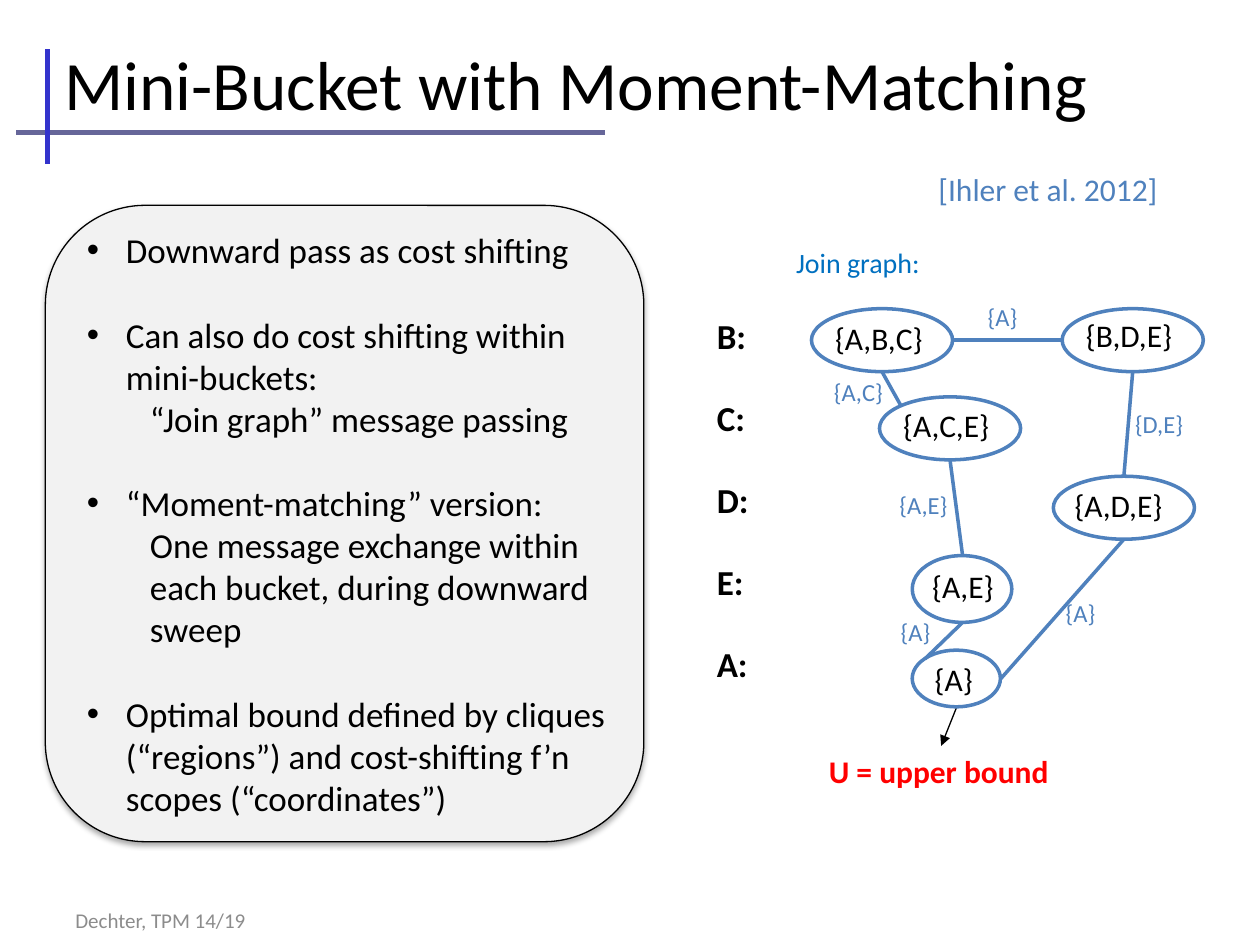
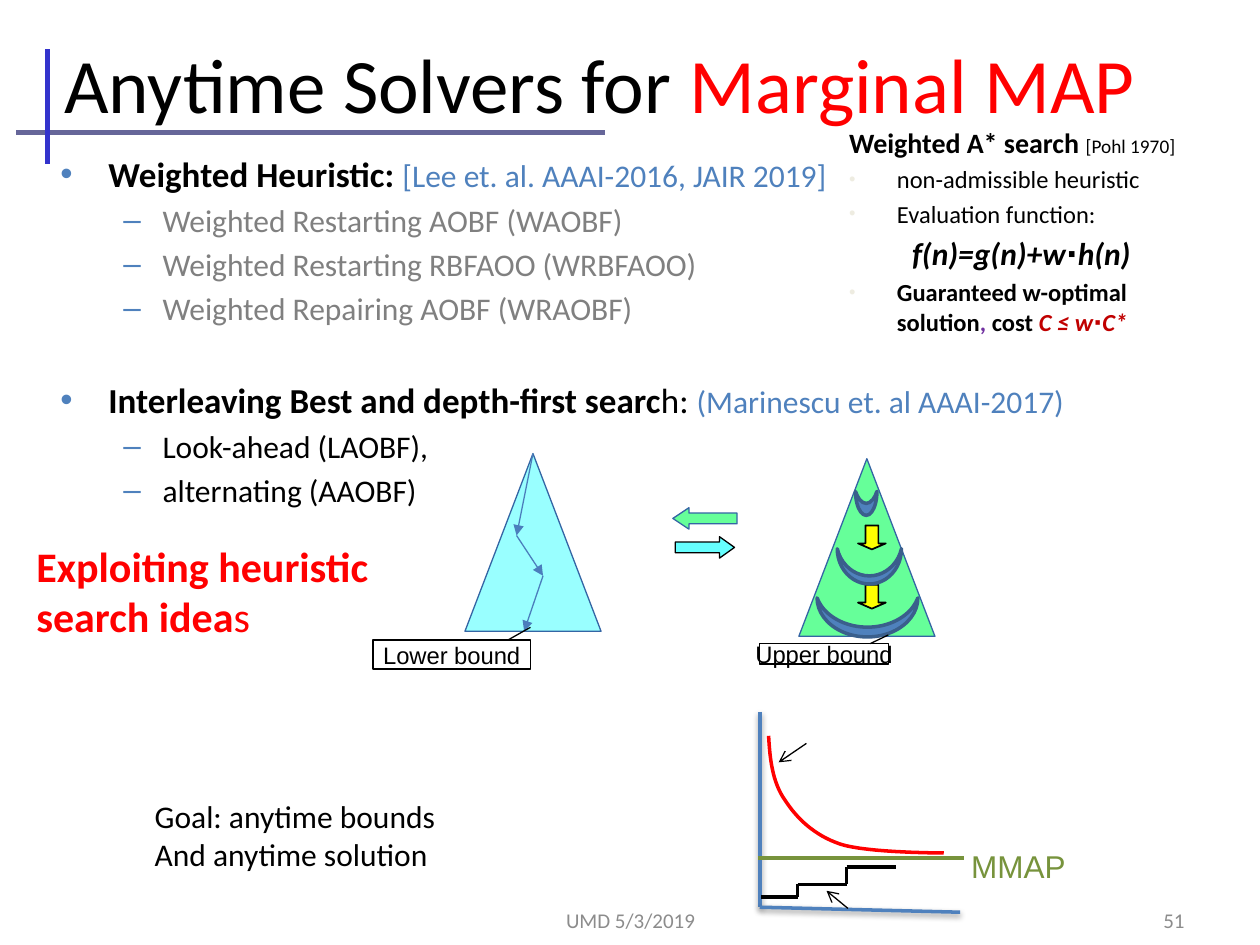
"""Build two slides on mini-bucket bounds and anytime solvers."""
from dataclasses import dataclass

from lxml import etree
from pptx import Presentation
from pptx import util as u
from pptx.dml import color
from pptx.enum import shapes, text
from pptx.oxml import ns

BLACK, RED, BLUE, GREY = "000000", "FF0000", "4F81BD", "8C8C8C"
GREEN, OLIVE, CYAN, YELLOW = "66FF99", "77933C", "99FFFF", "FFFF00"
SHAPE = shapes.MSO_SHAPE
LEFT, CENTER, RIGHT = text.PP_ALIGN.LEFT, text.PP_ALIGN.CENTER, text.PP_ALIGN.RIGHT


@dataclass
class Span:
    words: str
    size: float = 18
    ink: str = BLACK
    bold: bool = False
    italic: bool = False
    font: str = "Calibri"


@dataclass
class Para:
    spans: list[Span]
    left: float = 0
    hang: float = 0
    bullet: str = ""
    bullet_ink: str = BLACK
    bullet_scale: int = 100
    before: float = 0
    align: text.PP_ALIGN = LEFT
    level: int = 0


@dataclass
class Box:
    at: tuple[float, float, float, float]
    paras: list[Para]
    wrap: bool = False
    middle: bool = False


@dataclass
class Line:
    start: tuple[float, float]
    end: tuple[float, float]
    ink: str = BLUE
    width: float = 2
    arrow: str = ""
    shadow: int = 0


@dataclass
class Figure:
    kind: shapes.MSO_SHAPE
    at: tuple[float, float, float, float]
    fill: str = ""
    ink: str = BLUE
    width: float = 2
    adjust: tuple[float, ...] = ()
    turn: int = 0
    shadow: int = 0


def rgb(code: str) -> color.RGBColor:
    return color.RGBColor.from_string(code)


def inches(values) -> list[u.Length]:
    return [u.Inches(value) for value in values]


def set_effect(item, alpha: int = 0) -> None:
    """Replace the theme shadow with none, or with a soft one below."""
    effects = etree.SubElement(item._element.spPr, ns.qn("a:effectLst"))
    if alpha:
        cast = etree.SubElement(effects, ns.qn("a:outerShdw"), blurRad="40000",
                                dist="22000", dir="5400000", rotWithShape="0")
        tint = etree.SubElement(cast, ns.qn("a:srgbClr"), val=BLACK)
        etree.SubElement(tint, ns.qn("a:alpha"), val=str(alpha * 1000))


def set_line(item, ink: str, width: float) -> None:
    item.line.color.rgb = rgb(ink)
    item.line.width = u.Pt(width)


def format_para(para, plan: Para) -> None:
    para.alignment = plan.align
    para.level = plan.level
    if plan.before:
        para.space_before = u.Pt(plan.before)
    props = para._p.get_or_add_pPr()
    if plan.left:
        props.set("marL", str(u.Inches(plan.left)))
        props.set("indent", str(u.Inches(plan.hang)))
    if plan.bullet:
        tint = etree.SubElement(props, ns.qn("a:buClr"))
        etree.SubElement(tint, ns.qn("a:srgbClr"), val=plan.bullet_ink)
        etree.SubElement(props, ns.qn("a:buSzPct"), val=str(plan.bullet_scale * 1000))
        etree.SubElement(props, ns.qn("a:buFont"), typeface="Arial")
        etree.SubElement(props, ns.qn("a:buChar"), char=plan.bullet)
    for part in plan.spans:
        span = para.add_run()
        span.text = part.words
        span.font.name, span.font.size = part.font, u.Pt(part.size)
        span.font.bold, span.font.italic = part.bold, part.italic
        span.font.color.rgb = rgb(part.ink)


def write(item, paras: list[Para], wrap: bool = True, middle: bool = False) -> None:
    frame = item.text_frame
    frame.word_wrap = wrap
    frame.auto_size = text.MSO_AUTO_SIZE.NONE
    frame.vertical_anchor = text.MSO_ANCHOR.MIDDLE if middle else text.MSO_ANCHOR.TOP
    for index, plan in enumerate(paras):
        para = frame.add_paragraph() if index else frame.paragraphs[0]
        format_para(para, plan)


def draw_box(page, box: Box) -> None:
    write(page.shapes.add_textbox(*inches(box.at)), box.paras, box.wrap, box.middle)


def draw_label(page, at: tuple[float, float, float, float], span: Span) -> None:
    draw_box(page, Box(at, [Para([span])]))


def draw_line(page, line: Line) -> None:
    item = page.shapes.add_connector(shapes.MSO_CONNECTOR.STRAIGHT,
                                     *inches(line.start + line.end))
    set_line(item, line.ink, line.width)
    if line.arrow:
        etree.SubElement(item.line._get_or_add_ln(), ns.qn("a:tailEnd"), type=line.arrow)
    set_effect(item, line.shadow)


def draw_path(page, points, **style) -> None:
    for start, end in zip(points, points[1:]):
        draw_line(page, Line(start, end, **style))


def draw_figure(page, figure: Figure):
    item = page.shapes.add_shape(figure.kind, *inches(figure.at))
    for index, value in enumerate(figure.adjust):
        item.adjustments[index] = value
    if figure.fill:
        item.fill.solid()
        item.fill.fore_color.rgb = rgb(figure.fill)
    else:
        item.fill.background()
    set_line(item, figure.ink, figure.width)
    set_effect(item, figure.shadow)
    item.rotation = figure.turn
    return item


def draw_callout(page, at: tuple[float, float, float, float], words: str) -> None:
    item = draw_figure(page, Figure(SHAPE.LINE_CALLOUT_1, at, "FFFFFF", BLACK, 0.75,
                                    (-0.44, 1, -0.01, 0.86)))
    frame = item.text_frame
    frame.margin_left = frame.margin_right = u.Inches(0.09)
    frame.margin_top = frame.margin_bottom = u.Inches(0.04)
    write(item, [Para([Span(words, 13.6, font="Arial")], align=CENTER)], False, True)


def bezier(start, first, second, end, steps: int = 16) -> list[tuple[float, float]]:
    """Return points along one cubic curve, without its start."""
    points = []
    for step in range(1, steps + 1):
        t = step / steps
        weights = ((1 - t) ** 3, 3 * t * (1 - t) ** 2, 3 * t * t * (1 - t), t ** 3)
        points.append(tuple(sum(w * p[axis] for w, p in zip(weights, (start, first, second, end)))
                            for axis in (0, 1)))
    return points


def draw_curve(page, knots: list[tuple[float, float]], ink: str) -> None:
    points = [knots[0]]
    for index in range(0, len(knots) - 1, 3):
        points += bezier(*knots[index:index + 4])
    builder = page.shapes.build_freeform(*inches(points[0]), scale=1.0)
    builder.add_line_segments([inches(point) for point in points[1:]], close=False)
    item = builder.convert_to_shape()
    item.fill.background()
    set_line(item, ink, 2)
    set_effect(item)


def draw_footer(page, left: float, width: float, words: str, align) -> None:
    para = Para([Span(words, 12, GREY)], align=align)
    draw_box(page, Box((left, 7.1, width, 0.4), [para], True, True))


def place(holder, at: tuple[float, float, float, float]) -> None:
    holder.left, holder.top, holder.width, holder.height = inches(at)


def start_page(deck, layout: int, title: list[Span]):
    page = deck.slides.add_slide(deck.slide_layouts[layout])
    draw_line(page, Line((0.13, 1.05), (4.8, 1.05), "666699", 3))
    draw_line(page, Line((0.38, 1.3), (0.38, 0.39), "3333CC", 3))
    place(page.shapes.title, (0.41, 0.1, 8.92, 1.12))
    write(page.shapes.title, [Para(title)], middle=True)
    return page


def build_matching(deck) -> None:
    page = start_page(deck, 5, [Span("Mini-Bucket with Moment-Matching", 39.6)])
    for row, letter in enumerate("BCDEA"):
        draw_label(page, (5.59, 2.45 + 0.65 * row, 0.45, 0.44), Span(f"{letter}:", 20, bold=True))
    draw_label(page, (6.48, 5.92, 1.96, 0.4), Span("U = upper bound", ink=RED, bold=True))
    draw_label(page, (6.22, 1.9, 1.19, 0.37), Span("Join graph:", 16, "0070C0"))
    draw_label(page, (7.35, 1.3, 1.96, 0.4), Span("[Ihler et al. 2012]", ink=BLUE))
    draw_line(page, Line((7.59, 5.62), (7.47, 5.92), BLACK, 0.75, "triangle"))

    cliques = [("{A,B,C}", (6.44, 2.45, 1.12, 0.5), (6.53, 2.48, 0.9)),
               ("{B,D,E}", (8.43, 2.45, 1.12, 0.5), (8.52, 2.46, 0.92)),
               ("{A,C,E}", (6.98, 3.15, 1.12, 0.5), (7.07, 3.17, 0.89)),
               ("{A,D,E}", (8.36, 3.78, 1.12, 0.5), (8.43, 3.81, 0.92)),
               ("{A,E}", (7.24, 4.41, 0.79, 0.53), (7.3, 4.45, 0.69)),
               ("{A}", (7.24, 5.16, 0.7, 0.45), (7.32, 5.19, 0.51))]
    for words, oval, label in cliques:
        draw_figure(page, Figure(SHAPE.OVAL, oval))
        draw_label(page, (*label, 0.4), Span(words))
    separators = [("{A}", (7.56, 2.7), (8.43, 2.7), (7.74, 2.35, 0.45)),
                  ("{A,C}", (7, 2.95), (7.15, 3.22), (6.52, 2.94, 0.59)),
                  ("{D,E}", (8.99, 2.95), (8.92, 3.78), (8.91, 3.2, 0.59)),
                  ("{A,E}", (7.54, 3.65), (7.64, 4.41), (7.04, 3.84, 0.59)),
                  ("{A}", (8.92, 4.28), (7.94, 5.39), (8.36, 4.7, 0.45)),
                  ("{A}", (7.64, 4.94), (7.34, 5.23), (7.05, 4.85, 0.45))]
    for words, start, end, label in separators:
        draw_line(page, Line(start, end))
        draw_label(page, (*label, 0.34), Span(words, 14, BLUE))

    panel = draw_figure(page, Figure(SHAPE.ROUNDED_RECTANGLE, (0.36, 1.63, 4.75, 5.05),
                                     "F2F2F2", BLACK, 0.75, shadow=35))
    panel.text_frame.margin_right = 0
    points = [("Downward pass as cost shifting", ""),
              ("Can also do cost shifting within mini-buckets:", "“Join graph” message passing"),
              ("“Moment-matching” version:",
               "One message exchange within each bucket, during downward sweep"),
              ("Optimal bound defined by cliques (“regions”) and cost-shifting f’n "
               "scopes (“coordinates”)", "")]
    paras = []
    for head, detail in points:
        paras.append(Para([Span(head, 20)], 0.31, -0.31, "•", before=24.4 if paras else 0))
        if detail:
            paras.append(Para([Span(detail, 20)], 0.5, level=1))
    write(panel, paras, middle=True)
    draw_footer(page, 0.5, 2.33, "Dechter, TPM 14/19", LEFT)


def topic(spans: list[Span], before: float = 4) -> Para:
    return Para(spans, 0.38, -0.38, "•", BLUE, before=before)


def solver(words: str, ink: str) -> Para:
    return Para([Span(words, ink=ink)], 0.81, -0.31, "–", BLUE, before=3.6, level=1)


def remark(spans: list[Span]) -> Para:
    return Para(spans, 0.38, -0.38, "•", "EEECE1", 75, before=2.8)


def draw_bounds_plot(page) -> None:
    for start in ((6.03, 5.65), (7.62, 7.24)):
        draw_line(page, Line(start, (6.03, 7.2), shadow=38))
    draw_curve(page, [(6.1, 5.84), (6.11, 6.02), (6.13, 6.21), (6.23, 6.35), (6.32, 6.49),
                      (6.46, 6.63), (6.67, 6.7), (6.88, 6.77), (7.49, 6.77), (7.49, 6.77)], RED)
    draw_path(page, [(6.04, 7.12), (6.33, 7.12), (6.33, 7.02), (6.72, 7.02),
                     (6.72, 6.88), (7.11, 6.88)], ink=BLACK)
    draw_line(page, Line((6.02, 6.81), (7.65, 6.81), OLIVE))
    for start, end in (((6.4, 5.9), (6.18, 6.05)), ((6.73, 7.21), (6.56, 7.07))):
        draw_line(page, Line(start, end, BLACK, 0.75, "arrow"))
    draw_label(page, (7.61, 6.67, 0.96, 0.4), Span("MMAP", ink=OLIVE, font="Arial"))


def draw_search_trees(page) -> None:
    edge = "3465A4"
    figures = [Figure(SHAPE.ISOSCELES_TRIANGLE, (3.69, 3.6, 1.08, 1.41), CYAN, edge, 0.75),
               Figure(SHAPE.ISOSCELES_TRIANGLE, (6.34, 3.64, 1.08, 1.41), GREEN, edge, 0.75)]
    figures += [Figure(SHAPE.DOWN_ARROW, (6.81, top, 0.22, 0.19), YELLOW, BLACK, 1, (0.47, 0.25))
                for top in (4.17, 4.64)]
    figures += [Figure(SHAPE.RIGHT_ARROW, (5.36, 4.26, 0.47, 0.17), "66FFFF", BLACK, 0.75, (0.5, 0.7)),
                Figure(SHAPE.LEFT_ARROW, (5.34, 4.03, 0.51, 0.17), GREEN, edge, 0.75, (0.5, 0.75))]
    moons = [((6.78, 3.91, 0.19, 0.17), 0.5), ((6.76, 4.24, 0.28, 0.51), 0.23),
             ((6.73, 4.5, 0.31, 0.8), 0.25)]
    figures += [Figure(SHAPE.MOON, at, BLUE, "3A5F8C", 2, (bend,), 270) for at, bend in moons]
    for figure in figures:
        draw_figure(page, figure)
    draw_path(page, [(4.23, 3.6), (4.1, 4.25), (4.31, 4.57), (4.16, 5.01)],
              ink="4B7EBC", width=0.75, arrow="triangle")
    draw_callout(page, (2.96, 5.08, 1.25, 0.23), "Lower bound")
    draw_callout(page, (6.03, 5.11, 1.02, 0.16), "Upper bound")


def build_solvers(deck) -> None:
    page = start_page(deck, 1, [Span("Anytime Solvers for ", 44), Span("Marginal MAP", 44, RED)])
    body = page.placeholders[1]
    place(body, (0.38, 1.16, 9.5, 5.83))
    write(body, [
        topic([Span("Weighted Heuristic: ", 20, bold=True),
               Span("[Lee et. al. AAAI-2016, JAIR 2019]", ink=BLUE)]),
        *[solver(f"Weighted {name}", "808080") for name in
          ("Restarting AOBF (WAOBF)", "Restarting RBFAOO (WRBFAOO)", "Repairing AOBF (WRAOBF)")],
        topic([Span("Interleaving Best and depth-first searc", 20, bold=True), Span("h: ", 20),
               Span("(Marinescu et. al AAAI-2017)", ink=BLUE)], 29.6),
        solver("Look-ahead (LAOBF),", BLACK), solver("alternating (AAOBF)", BLACK)])
    draw_bounds_plot(page)
    goals = ("Goal: anytime bounds", "And anytime solution")
    draw_box(page, Box((1.13, 6.28, 2.46, 0.71), [Para([Span(goal)]) for goal in goals], True))
    draw_box(page, Box((6.64, 0.95, 3.11, 1.96), [
        Para([Span("Weighted A* search ", 16, bold=True), Span("[Pohl 1970]", 11)],
             0.38, -0.38, before=3.2),
        remark([Span("non-admissible heuristic", 14)]),
        remark([Span("Evaluation function:", 14)]),
        Para([Span("f(n)=g(n)+w∙h(n)", bold=True, italic=True)], 0.88, -0.38, before=3.6, level=1),
        remark([Span("Guaranteed w-optimal solution", 14, bold=True), Span(",", 14, "7030A0", True),
                Span(" cost ", 14, bold=True), Span("C ≤ w∙C*", 14, "C00000", True, True)])], True))
    draw_search_trees(page)
    draw_box(page, Box((0.19, 4.24, 3.02, 0.91), [
        Para([Span("Exploiting heuristic", 24, RED, True)]),
        Para([Span("search idea", 24, RED, True), Span("s", 24, RED)])], True))
    draw_footer(page, 3.42, 3.17, "UMD 5/3/2019", CENTER)
    draw_footer(page, 7.17, 2.33, "51", RIGHT)


def main() -> None:
    deck = Presentation()
    deck.slide_width, deck.slide_height = inches((10, 7.5))
    build_matching(deck)
    build_solvers(deck)
    deck.save("out.pptx")


if __name__ == "__main__":
    main()
